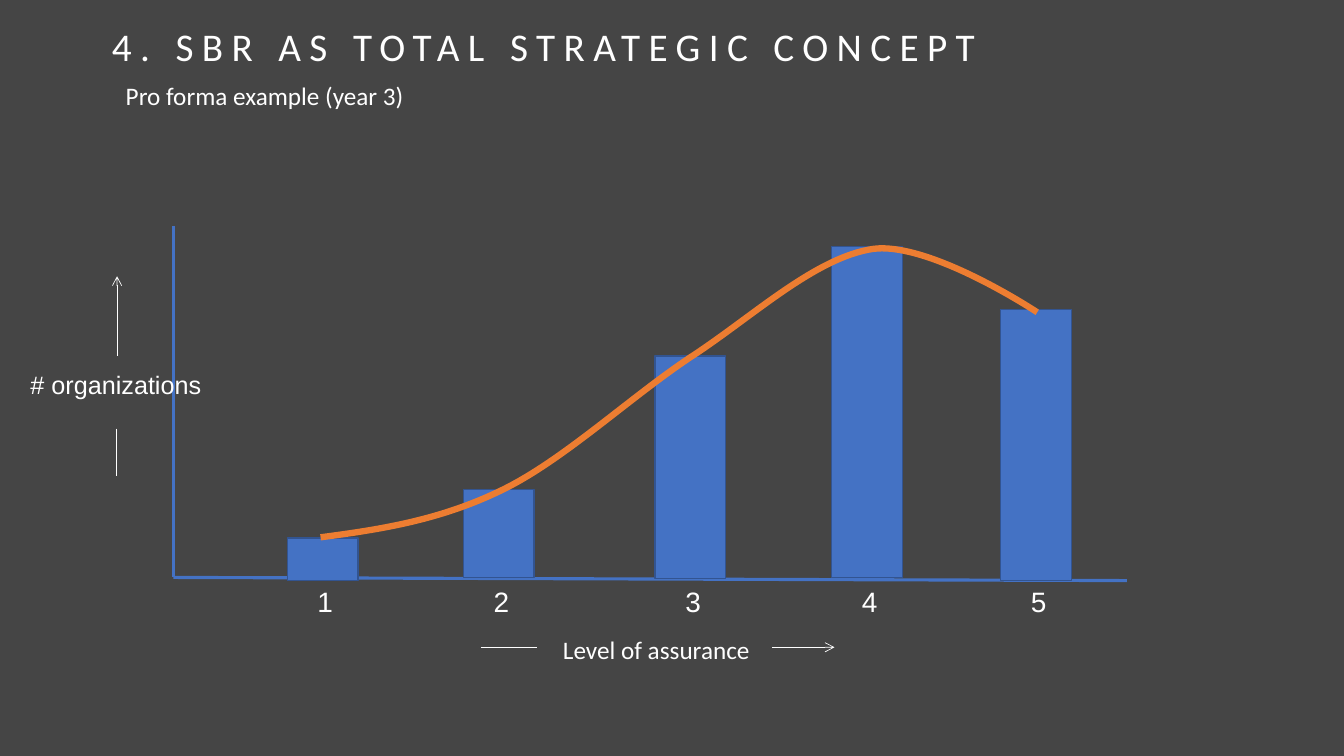
from typing import NamedTuple

from lxml import etree
from pptx import Presentation
from pptx.dml.color import RGBColor
from pptx.enum import shapes, text
from pptx.oxml.ns import qn
from pptx.util import Cm, Pt

COLORS = {
    "background": "454545",
    "text": "FFFFFF",
    "bar": "4472C4",
    "bar_edge": "325491",
    "trend": "ED7D31",
}
BAR_WIDTH = 1.78
LEVEL_OFFSET = 0.51
LEVEL_TOP = 14.6


class Label(NamedTuple):
    text: str
    left: float
    top: float
    width: float
    height: float
    size: int = 18
    font: str = "Calibri"
    centered: bool = False
    spacing: int = 0


class Line(NamedTuple):
    x1: float
    y1: float
    x2: float
    y2: float
    color: str = "text"
    weight: float = 0.5
    arrow: bool = False


class Bar(NamedTuple):
    level: str
    left: float
    top: float
    height: float


LABELS = [
    Label("4. SBR AS TOTAL STRATEGIC CONCEPT", 2.57, 0.43, 24.89, 1.45,
          size=28, spacing=600),
    Label("Pro forma example (year 3)", 2.92, 1.91, 22.78, 1.02),
    Label("Level of assurance", 12.83, 15.85, 7.42, 1.02, centered=True),
]
Y_TITLE = Label("# organizations", 0.28, 9.19, 5.28, 1.02, font="Arial", centered=True)
LINES = [
    Line(12.12, 16.31, 13.54, 16.31),
    Line(19.46, 16.31, 21.03, 16.31, arrow=True),
    Line(2.95, 8.97, 2.95, 6.96, arrow=True),
    Line(2.92, 10.8, 2.92, 11.99),
    Line(4.37, 14.55, 28.4, 14.63, "bar", 2.25),
    Line(4.37, 14.53, 4.37, 5.69, "bar", 2.25),
]
BARS = [
    Bar("1", 7.24, 13.56, 1.07),
    Bar("2", 11.68, 12.34, 2.21),
    Bar("3", 16.51, 8.97, 5.61),
    Bar("4", 20.96, 6.22, 8.33),
    Bar("5", 25.22, 7.8, 6.83),
]
# Start point, then two control points and an end point for each curve
TREND = [
    (8.08, 13.54),
    (9.6, 13.34), (11.1, 13.11), (12.67, 12.34),
    (14.22, 11.58), (15.88, 10.01), (17.42, 8.99),
    (18.97, 7.98), (20.55, 6.48), (22.02, 6.27),
    (23.47, 6.1), (26.14, 7.87), (26.14, 7.87),
]


def rgb(name: str) -> RGBColor:
    return RGBColor.from_string(COLORS[name])


def add_label(slide, label: Label) -> None:
    sp = slide.shapes.add_textbox(
        Cm(label.left), Cm(label.top), Cm(label.width), Cm(label.height))
    tf = sp.text_frame
    tf.word_wrap = True
    tf.auto_size = text.MSO_AUTO_SIZE.SHAPE_TO_FIT_TEXT
    p = tf.paragraphs[0]
    r = p.add_run()
    r.text = label.text
    p.font.name = label.font
    p.font.size = Pt(label.size)
    p.font.color.rgb = rgb("text")
    if label.centered:
        p.alignment = text.PP_ALIGN.CENTER
    if label.spacing:
        r.font._element.set("spc", str(label.spacing))


def add_line(slide, line: Line) -> None:
    sp = slide.shapes.add_connector(
        shapes.MSO_CONNECTOR.STRAIGHT,
        Cm(line.x1), Cm(line.y1), Cm(line.x2), Cm(line.y2))
    sp.line.color.rgb = rgb(line.color)
    sp.line.width = Pt(line.weight)
    if line.arrow:
        etree.SubElement(sp.line._get_or_add_ln(), qn("a:tailEnd"), type="arrow")
    etree.SubElement(sp._element.spPr, qn("a:effectLst"))


def add_bar(slide, bar: Bar) -> None:
    sp = slide.shapes.add_shape(
        shapes.MSO_SHAPE.RECTANGLE,
        Cm(bar.left), Cm(bar.top), Cm(BAR_WIDTH), Cm(bar.height))
    sp.shadow.inherit = False
    sp.fill.solid()
    sp.fill.fore_color.rgb = rgb("bar")
    sp.line.color.rgb = rgb("bar_edge")
    sp.line.width = Pt(1)


def add_curve(slide, points: list[tuple[float, float]]) -> None:
    """Draw a freeform whose vertices, three at a time, become cubic curves."""
    start, *rest = [(Cm(x), Cm(y)) for x, y in points]
    builder = slide.shapes.build_freeform(*start)
    builder.add_line_segments(rest, close=False)
    sp = builder.convert_to_shape()
    sp.shadow.inherit = False
    sp.fill.background()
    sp.line.color.rgb = rgb("trend")
    sp.line.width = Pt(4.5)
    segments = sp._element.xpath(".//a:lnTo")
    for i in range(0, len(segments), 3):
        curve = etree.Element(qn("a:cubicBezTo"))
        segments[i].addprevious(curve)
        for segment in segments[i:i + 3]:
            curve.append(segment[0])
            segment.getparent().remove(segment)


def main() -> None:
    prs = Presentation()
    prs.slide_width, prs.slide_height = Cm(33.87), Cm(19.05)
    slide = prs.slides.add_slide(prs.slide_layouts[6])
    slide.background.fill.solid()
    slide.background.fill.fore_color.rgb = rgb("background")

    for label in LABELS:
        add_label(slide, label)
    for line in LINES:
        add_line(slide, line)
    for bar in BARS:
        add_label(slide, Label(bar.level, bar.left + LEVEL_OFFSET, LEVEL_TOP,
                               1.07, 1.09, size=20, font="Arial"))
        add_bar(slide, bar)
    add_curve(slide, TREND)
    add_label(slide, Y_TITLE)
    prs.save("out.pptx")


if __name__ == "__main__":
    main()
